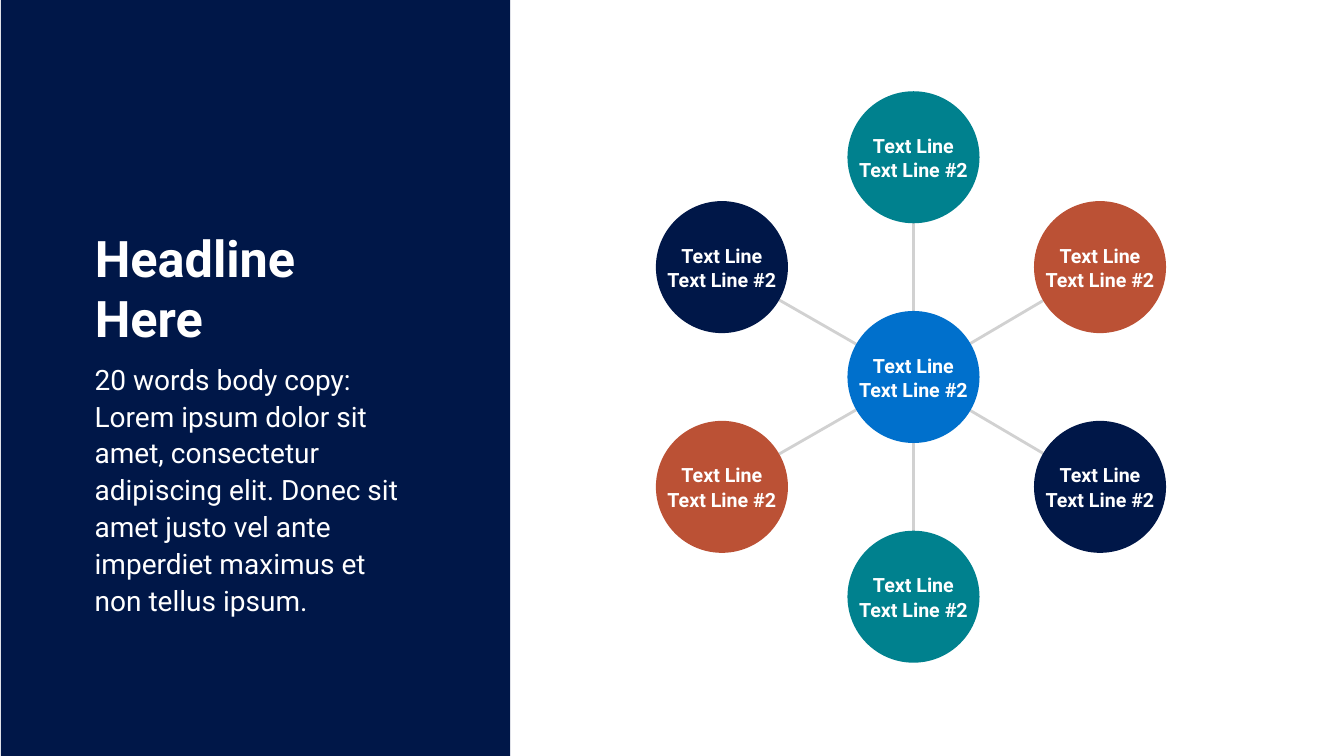
from dataclasses import dataclass
from math import hypot

from lxml.etree import SubElement
from pptx import Presentation
from pptx.dml.color import RGBColor as RGB
from pptx.enum.shapes import MSO_CONNECTOR as CONN, MSO_SHAPE as SHAPE
from pptx.enum.text import MSO_ANCHOR as ANCHOR, MSO_AUTO_SIZE as FIT, PP_ALIGN as ALIGN
from pptx.oxml.ns import qn
from pptx.util import Inches, Pt


@dataclass(frozen=True)
class Theme:
    font: str = "Roboto"
    navy: str = "001748"
    blue: str = "0070CC"
    teal: str = "00818E"
    rust: str = "BB5135"
    grey: str = "D1D1D1"
    white: str = "FFFFFF"
    headline: int = 36
    body: int = 20
    label: int = 14


T = Theme()
TITLE = "Headline Here"
BODY = ("20 words body copy: Lorem ipsum dolor sit amet, consectetur adipiscing elit. "
        "Donec sit amet justo vel ante imperdiet maximus et non tellus ipsum.")
LABEL = ["Text Line", "Text Line #2"]
SATELLITES = [
    (-1.9, -1.09, T.navy),
    (-1.9, 1.09, T.rust),
    (0, 2.18, T.teal),
    (1.85, 1.09, T.navy),
    (1.85, -1.09, T.rust),
    (0, -2.18, T.teal),
]


def set_all(obj, values):
    for name, value in values.items():
        setattr(obj, name, value)


def write(tf, lines, size, bold=False, frame=None, para=None):
    set_all(tf, {"word_wrap": True, "auto_size": FIT.NONE,
                 "vertical_anchor": ANCHOR.TOP, **(frame or {})})
    for i, line in enumerate(lines):
        p = tf.paragraphs[0] if i == 0 else tf.add_paragraph()
        set_all(p, {"alignment": ALIGN.LEFT, **(para or {})})
        r = p.add_run()
        r.text = line
        set_all(r.font, {"name": T.font, "size": Pt(size), "bold": bold})
        r.font.color.rgb = RGB.from_string(T.white)


def add_filled(s, kind, box, color):
    sp = s.shapes.add_shape(kind, *map(Inches, box))
    sp.shadow.inherit = False
    sp.fill.solid()
    sp.fill.fore_color.rgb = RGB.from_string(color)
    sp.line.fill.background()
    return sp


def add_circle(s, cx, cy, size, color):
    sp = add_filled(s, SHAPE.OVAL, (cx - size / 2, cy - size / 2, size, size), color)
    margins = {f"margin_{side}": 0 for side in ("left", "right", "top", "bottom")}
    write(sp.text_frame, LABEL, T.label, bold=True,
          frame={"word_wrap": False, "vertical_anchor": ANCHOR.MIDDLE, **margins},
          para={"alignment": ALIGN.CENTER, "line_spacing": Pt(17.4)})


def add_spoke(s, cx, cy, dx, dy, radius):
    edge = radius / hypot(dx, dy)
    ends = [(cx + dx * t, cy + dy * t) for t in (edge, 1 - edge)]
    line = s.shapes.add_connector(CONN.STRAIGHT, *(Inches(v) for end in ends for v in end))
    line.line.color.rgb = RGB.from_string(T.grey)
    line.line.width = Pt(2)
    SubElement(line.element.spPr, qn("a:effectLst"))


def add_text_panel(s, x, y, w, h):
    panel = add_filled(s, SHAPE.RECTANGLE, (x, y, w, h), T.navy)
    left, width = x + 0.83, 3.32
    title = s.shapes.title
    panel.element.addnext(title.element)
    set_all(title, {"left": Inches(left), "top": Inches(y + 2.2),
                    "width": Inches(width), "height": Inches(1.31)})
    write(title.text_frame, [TITLE], T.headline, bold=True)
    body = s.shapes.add_textbox(*map(Inches, (left, y + 3.51, width, 2.93)))
    write(body.text_frame, [BODY], T.body,
          para={"line_spacing": 1.1, "space_before": Pt(4), "space_after": Pt(6)})


def add_hub_diagram(s, x, y, w, h):
    size = 1.31
    cx, cy = x + 2.56, y + h / 2
    for dx, dy, _ in SATELLITES:
        add_spoke(s, cx, cy, dx, dy, size / 2)
    for dx, dy, color in [(0, 0, T.blue), *SATELLITES]:
        add_circle(s, cx + dx, cy + dy, size, color)


def main():
    prs = Presentation()
    set_all(prs, {"slide_width": Inches(13.33), "slide_height": Inches(7.5)})
    s = prs.slides.add_slide(prs.slide_layouts[5])
    add_text_panel(s, 0.01, 0, 5.05, 7.5)
    add_hub_diagram(s, 6.5, 0.9, 5.06, 5.68)
    prs.save("out.pptx")


if __name__ == "__main__":
    main()
